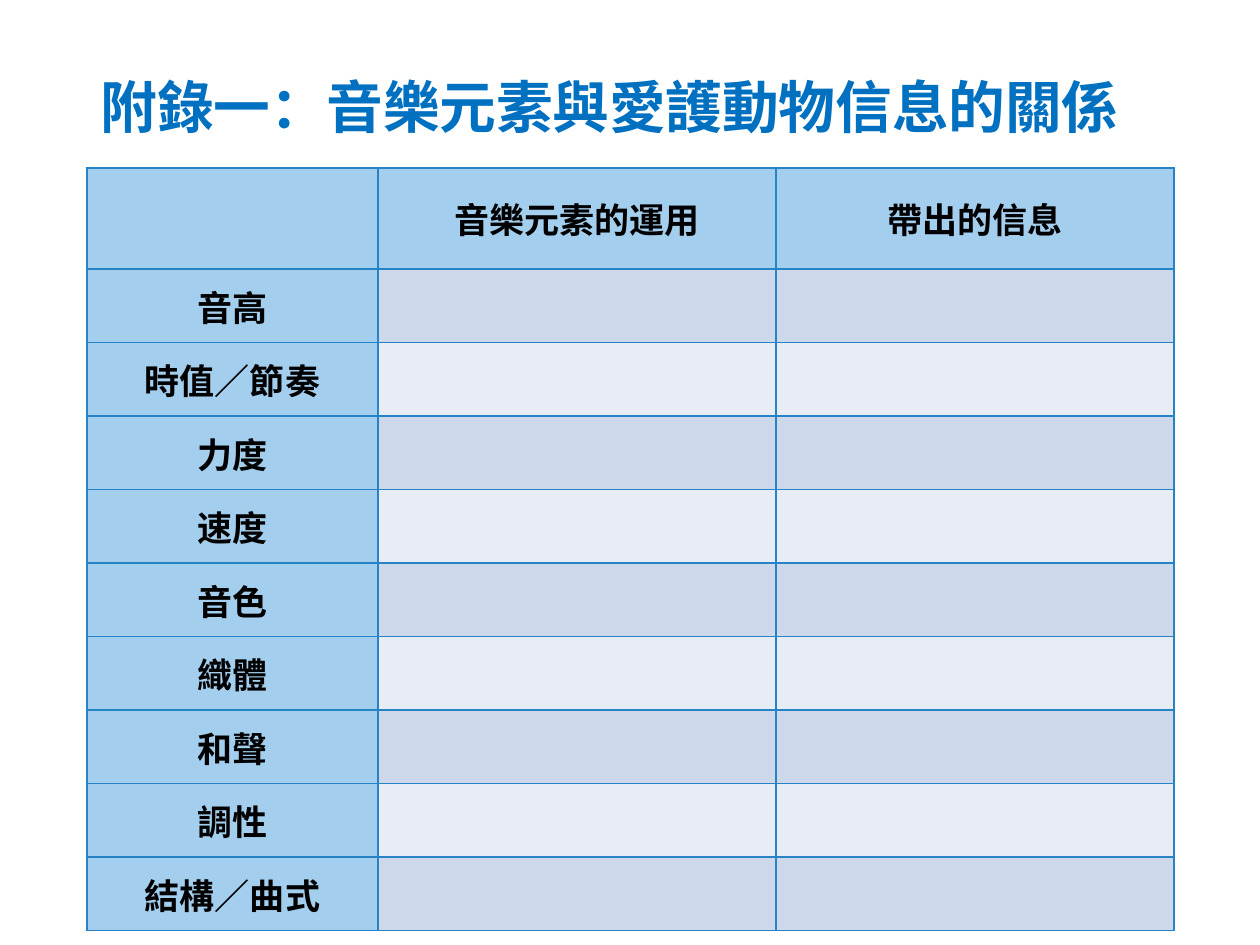
from lxml import etree
from pptx import Presentation
from pptx.dml.color import RGBColor
from pptx.enum.text import MSO_ANCHOR, MSO_AUTO_SIZE, PP_ALIGN
from pptx.oxml.ns import qn
from pptx.util import Pt

TITLE = "附錄一：音樂元素與愛護動物信息的關係"
HEADINGS = ["", "音樂元素的運用", "帶出的信息"]
ELEMENTS = ["音高", "時值／節奏", "力度", "速度", "音色", "織體", "和聲", "調性", "結構／曲式"]

FONT = "Noto Sans CJK SC"
TITLE_BLUE = RGBColor(0x00, 0x70, 0xC0)
BORDER_BLUE = RGBColor(0x26, 0x83, 0xC6)
HEADING_FILL = RGBColor(0xA3, 0xCE, 0xED)
BAND_FILLS = [RGBColor(0xCD, 0xD9, 0xEA), RGBColor(0xE8, 0xED, 0xF5)]
BLACK = RGBColor(0, 0, 0)
MIDDLE = MSO_ANCHOR.MIDDLE
CENTER = PP_ALIGN.CENTER
LEFT = PP_ALIGN.LEFT
NO_AUTOFIT = MSO_AUTO_SIZE.NONE

SLIDE_W, SLIDE_H = 1260, 945
TITLE_BOX = (87, 37, 1086, 137)
TABLE_LEFT, TABLE_TOP = 87, 168
COLUMN_WIDTHS = [291, 398, 398]
HEADING_H, ELEMENTS_H = 101, 662
TITLE_ONLY_LAYOUT = 5


def px(length):
    return round(length * 914400 / 126)


def format_text(paragraph, size, color, align):
    paragraph.alignment = align
    for run in paragraph.runs:
        run.font.size = Pt(size)
        run.font.bold = True
        run.font.name = FONT
        run.font.color.rgb = color
        east_asian = etree.SubElement(run.font._element, qn("a:ea"))
        east_asian.set("typeface", FONT)


def add_borders(cell):
    properties = cell._tc.get_or_add_tcPr()
    for position, side in enumerate(("lnL", "lnR", "lnT", "lnB")):
        line = etree.Element(qn(f"a:{side}"), w=str(Pt(1)))
        fill = etree.SubElement(line, qn("a:solidFill"))
        etree.SubElement(fill, qn("a:srgbClr"), val=str(BORDER_BLUE))
        properties.insert(position, line)


def add_title(slide):
    title = slide.shapes.title
    title.left, title.top, title.width, title.height = map(px, TITLE_BOX)
    frame = title.text_frame
    frame.text = TITLE
    frame.auto_size = NO_AUTOFIT
    frame.vertical_anchor = MIDDLE
    paragraph = frame.paragraphs[0]
    format_text(paragraph, 32.4, TITLE_BLUE, LEFT)
    paragraph._p.get_or_add_pPr().set("marL", str(px(1)))
    paragraph.runs[0].font._element.set("spc", "-10")


def add_elements_table(slide):
    rows = [HEADINGS] + [[element, "", ""] for element in ELEMENTS]
    table = slide.shapes.add_table(
        len(rows), len(HEADINGS), px(TABLE_LEFT), px(TABLE_TOP),
        px(sum(COLUMN_WIDTHS)), px(HEADING_H + ELEMENTS_H)).table
    for column, width in zip(table.columns, COLUMN_WIDTHS):
        column.width = px(width)
    for r, labels in enumerate(rows):
        table.rows[r].height = px(ELEMENTS_H / len(ELEMENTS) if r else HEADING_H)
        for c, label in enumerate(labels):
            cell = table.cell(r, c)
            is_heading = r == 0 or c == 0
            cell.fill.solid()
            cell.fill.fore_color.rgb = HEADING_FILL if is_heading else BAND_FILLS[(r - 1) % 2]
            add_borders(cell)
            cell.vertical_anchor = MIDDLE
            if label:
                cell.text_frame.text = label
                format_text(cell.text_frame.paragraphs[0], 20, BLACK, CENTER)


def main():
    presentation = Presentation()
    presentation.slide_width, presentation.slide_height = px(SLIDE_W), px(SLIDE_H)
    slide = presentation.slides.add_slide(presentation.slide_layouts[TITLE_ONLY_LAYOUT])
    add_title(slide)
    add_elements_table(slide)
    presentation.save("out.pptx")


if __name__ == "__main__":
    main()
